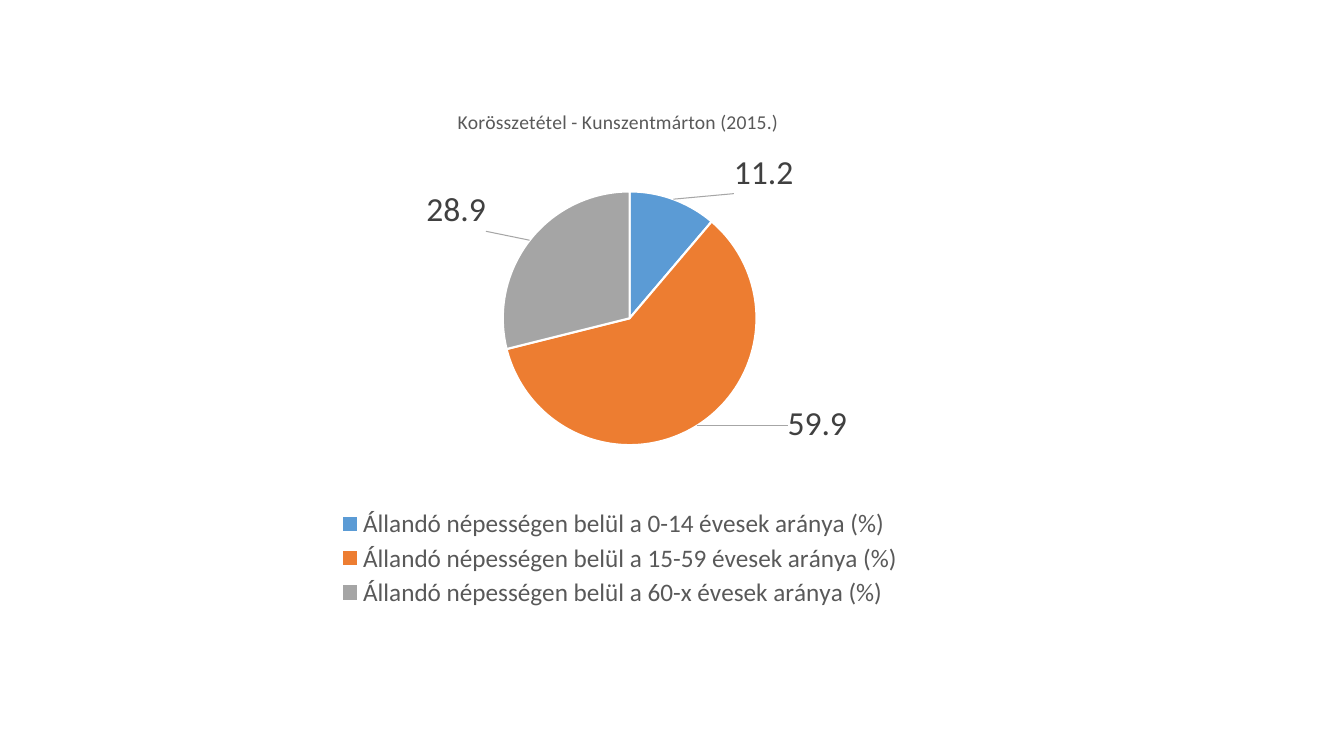
from dataclasses import dataclass

from lxml import etree
from pptx import Presentation
from pptx import util as u
from pptx.chart.chart import Chart
from pptx.chart.data import CategoryChartData
from pptx.dml.color import RGBColor
from pptx.enum import chart as ch
from pptx.oxml import parse_xml
from pptx.oxml.ns import nsdecls, qn


@dataclass(frozen=True)
class Theme:
    face: str = "Calibri"
    text: str = "595959"
    label: str = "404040"
    lead: str = "A6A6A6"
    edge: str = "FFFFFF"
    head_pt: float = 14
    key_pt: float = 18
    label_pt: float = 24


@dataclass(frozen=True)
class Slice:
    ages: str
    share: float
    fill: str
    dx: float  # label shift, as a part of the chart's width
    dy: float  # label shift, as a part of the chart's height

    @property
    def name(self) -> str:
        return f"Állandó népességen belül a {self.ages} évesek aránya (%)"


THEME = Theme()
TITLE = "Korösszetétel - Kunszentmárton (2015.)"
SLICES = [
    Slice("0-14", 11.2, "5B9BD5", 0.06, 0),
    Slice("15-59", 59.9, "ED7D31", 0.09, -0.05),
    Slice("60-x", 28.9, "A5A5A5", -0.04, -0.01),
]


def style(font, size: float, tint: str) -> None:
    font.name, font.size, font.bold = THEME.face, u.Pt(size), False
    font.color.rgb = RGBColor.from_string(tint)


def layout(edge: bool = True, inner: bool = False, **parts: float) -> etree._Element:
    """Build a manual layout from fractions of the chart's size."""
    tags = '<c:layoutTarget val="inner"/>' if inner else ""
    if edge:
        tags += '<c:xMode val="edge"/><c:yMode val="edge"/>'
    tags += "".join(f'<c:{k} val="{v}"/>' for k, v in parts.items())
    return parse_xml(f'<c:layout {nsdecls("c")}><c:manualLayout>{tags}'
                     "</c:manualLayout></c:layout>")


def place(node: etree._Element, after: str, box: etree._Element) -> None:
    """Put a layout in its place, just behind the named child."""
    for old in node.findall(qn("c:layout")):
        node.remove(old)
    prior = node.find(qn(after)) if after else None
    node.insert(0 if prior is None else node.index(prior) + 1, box)


def add_head(chart: Chart) -> None:
    chart.has_title = True
    run = chart.chart_title.text_frame.paragraphs[0].add_run()
    run.text = TITLE
    style(run.font, THEME.head_pt, THEME.text)
    node = chart.element.xpath("c:chart/c:title")[0]
    place(node, "c:tx", layout(x=0.33, y=0.04))


def add_key(chart: Chart) -> None:
    chart.has_legend = True
    key = chart.legend
    key.position = ch.XL_LEGEND_POSITION.BOTTOM
    key.include_in_layout = False
    style(key.font, THEME.key_pt, THEME.text)
    node = chart.element.xpath("c:chart/c:legend")[0]
    place(node, "c:legendPos", layout(x=0.21, y=0.79, w=0.58, h=0.2))


def paint(chart: Chart) -> None:
    plot = chart.plots[0]
    plot.vary_by_categories = True
    series = plot.series[0]

    # Shared label style
    tags = series.data_labels
    tags.show_value = True
    tags.position = ch.XL_LABEL_POSITION.OUTSIDE_END
    style(tags.font, THEME.label_pt, THEME.label)

    # Slice colours and label places
    for i, part in enumerate(SLICES):
        point = series.points[i]
        point.format.fill.solid()
        point.format.fill.fore_color.rgb = RGBColor.from_string(part.fill)
        point.format.line.color.rgb = RGBColor.from_string(THEME.edge)
        point.format.line.width = u.Pt(1.5)
        tag = point.data_label
        style(tag.font, THEME.label_pt, THEME.label)
        tag.position = ch.XL_LABEL_POSITION.OUTSIDE_END
        node = chart.element.xpath(f'.//c:dLbl[c:idx/@val="{i}"]')[0]
        place(node, "c:idx", layout(edge=False, x=part.dx, y=part.dy))

    # Leader lines
    group = chart.element.xpath(".//c:ser/c:dLbls")[0]
    for old in group.findall(qn("c:showLeaderLines")):
        group.remove(old)
    group.append(parse_xml(f'<c:showLeaderLines {nsdecls("c")} val="1"/>'))
    group.append(parse_xml(
        f'<c:leaderLines {nsdecls("c", "a")}><c:spPr><a:ln w="9525"><a:solidFill>'
        f'<a:srgbClr val="{THEME.lead}"/></a:solidFill></a:ln></c:spPr></c:leaderLines>'))

    # Pie area
    area = chart.element.xpath("c:chart/c:plotArea")[0]
    place(area, "", layout(inner=True, x=0.38, y=0.2, w=0.26, h=0.48))


def main() -> None:
    deck = Presentation()
    deck.slide_width, deck.slide_height = u.Pt(960), u.Pt(540)
    slide = deck.slides.add_slide(deck.slide_layouts[6])

    # Age shares
    data = CategoryChartData(number_format="0.0")
    data.categories = [part.name for part in SLICES]
    data.add_series("Series 1", [part.share for part in SLICES])
    frame = slide.shapes.add_chart(ch.XL_CHART_TYPE.PIE, u.Pt(94.3), u.Pt(59.8),
                                   u.Pt(697), u.Pt(380.9), data)
    chart = frame.chart
    style(chart.font, 10, "000000")
    add_head(chart)
    add_key(chart)
    paint(chart)
    deck.save("out.pptx")


if __name__ == "__main__":
    main()
